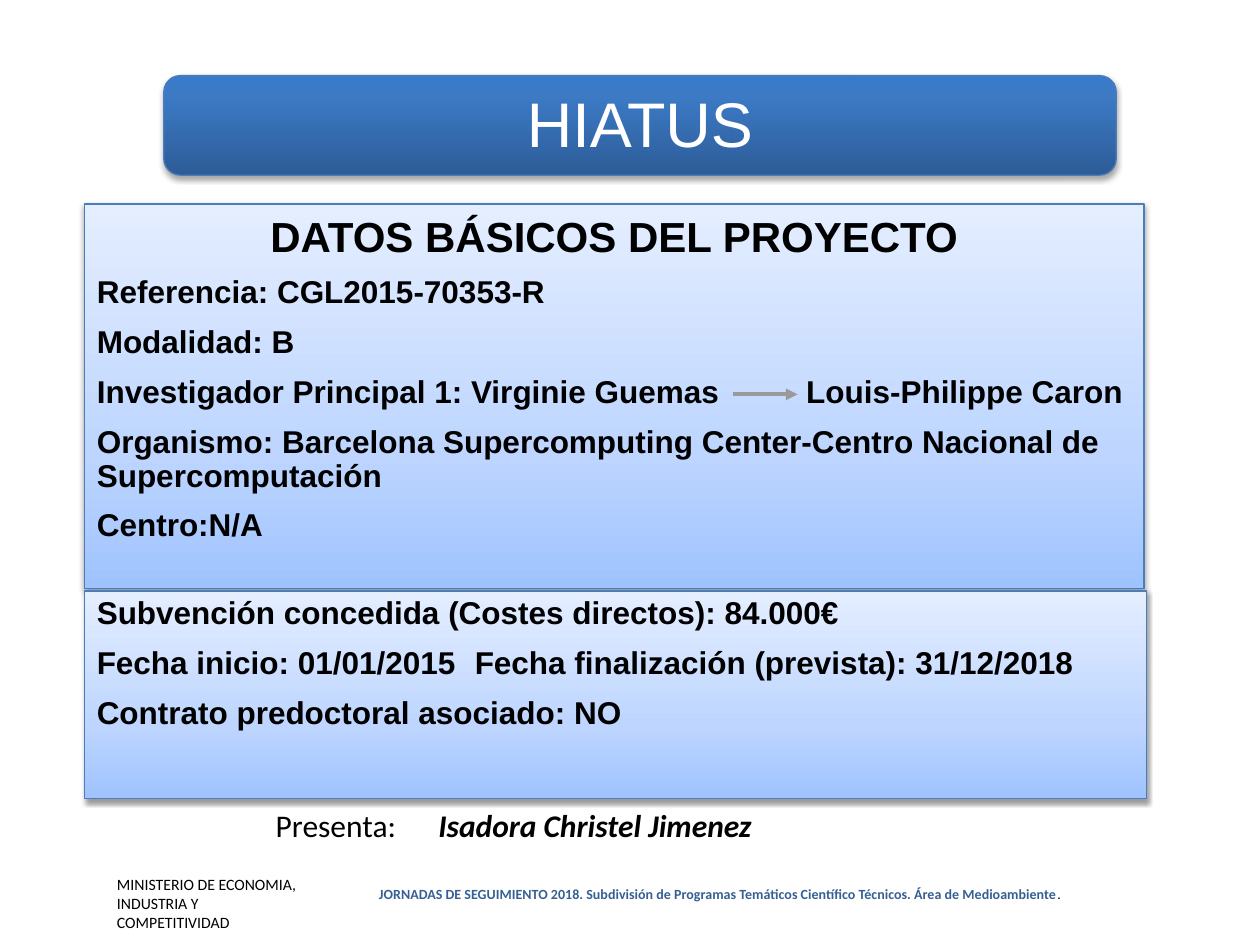
import pptx
import pptx.util
import pptx.dml.color
import pptx.enum.shapes
import pptx.enum.text
import pptx.oxml
import pptx.oxml.ns
from pptx.util import Inches

COLORS = {
    "text": "000000",
    "white": "FFFFFF",
    "footer": "366092",
    "outline": "4A7DBA",
    "arrow": "999999",
}
PANEL_STOPS = [(0, "9FC3FF"), (35, "BDD5FF"), (100, "E4EEFF")]
TITLE_STOPS = [(0, "2D5C97"), (80, "3C7AC5"), (100, "397BC9")]
ALIGN = pptx.enum.text.PP_ALIGN
SHAPES = pptx.enum.shapes.MSO_SHAPE
NAMESPACE = pptx.oxml.ns.nsdecls("a")


def rgb(name):
    return pptx.dml.color.RGBColor.from_string(COLORS[name])


class SlideBuilder:
    def __init__(self, page):
        self.page = page

    def style(self, span, size, font="Arial", color="text", bold=False, italic=False):
        span.font.size = pptx.util.Pt(size)
        span.font.name = font
        span.font.color.rgb = rgb(color)
        span.font.bold = bold
        span.font.italic = italic

    def tab(self, para, position):
        properties = para._p.get_or_add_pPr()
        properties.append(pptx.oxml.parse_xml(
            f'<a:tabLst {NAMESPACE}><a:tab pos="{Inches(position)}" algn="l"/></a:tabLst>'))

    def shape(self, kind, left, top, width, height):
        box = self.page.shapes.add_shape(
            kind, Inches(left), Inches(top), Inches(width), Inches(height))
        box.shadow.inherit = False
        box.text_frame.word_wrap = True
        box.text_frame.vertical_anchor = pptx.enum.text.MSO_ANCHOR.TOP
        return box

    def gradient_shape(self, kind, place, stops, opacity, distance):
        box = self.shape(kind, *place)
        box.line.color.rgb = rgb("outline")
        box.line.width = pptx.util.Pt(0.75)
        marks = "".join(
            f'<a:gs pos="{position * 1000}"><a:srgbClr val="{color}"/></a:gs>'
            for position, color in stops)
        properties = box._element.spPr
        properties.find(pptx.oxml.ns.qn("a:ln")).addprevious(pptx.oxml.parse_xml(
            f'<a:gradFill {NAMESPACE} rotWithShape="1"><a:gsLst>{marks}</a:gsLst>'
            '<a:lin ang="16200000" scaled="0"/></a:gradFill>'))
        properties.find(pptx.oxml.ns.qn("a:effectLst")).append(pptx.oxml.parse_xml(
            f'<a:outerShdw {NAMESPACE} blurRad="{pptx.util.Pt(3.1)}" '
            f'dist="{pptx.util.Pt(distance)}" dir="5400000" rotWithShape="0">'
            f'<a:srgbClr val="000000"><a:alpha val="{opacity * 1000}"/></a:srgbClr>'
            '</a:outerShdw>'))
        return box

    def title(self, text, place):
        box = self.gradient_shape(SHAPES.ROUNDED_RECTANGLE, place, TITLE_STOPS, 35, 1.8)
        frame = box.text_frame
        frame.margin_top = Inches(0.15)
        frame.vertical_anchor = pptx.enum.text.MSO_ANCHOR.MIDDLE
        frame.text = text
        para = frame.paragraphs[0]
        para.alignment = ALIGN.CENTER
        para.line_spacing = 0.7
        self.style(para.runs[0], 36, color="white")

    def panel(self, place, lines, heading=None, tab=None):
        box = self.gradient_shape(SHAPES.RECTANGLE, place, PANEL_STOPS, 38, 1.6)
        frame = box.text_frame
        frame.text = "\n".join(([heading] if heading else []) + lines)
        for index, para in enumerate(frame.paragraphs):
            is_heading = bool(heading) and index == 0
            para.alignment = ALIGN.CENTER if is_heading else ALIGN.LEFT
            if not is_heading:
                para.line_spacing = 0.9
            if index:
                para.space_before = pptx.util.Pt(9)
            if "\t" in para.text:
                self.tab(para, tab)
            for span in para.runs:
                self.style(span, 24 if is_heading else 18, bold=True)

    def footer_block(self, text, place):
        box = self.shape(SHAPES.RECTANGLE, *place)
        box.fill.solid()
        box.fill.fore_color.rgb = rgb("white")
        box.line.fill.background()
        box.text_frame.text = text
        para = box.text_frame.paragraphs[0]
        para.alignment = ALIGN.LEFT
        self.style(para.runs[0], 9, "Calibri")

    def label(self, place, spans, size, tab=None):
        box = self.page.shapes.add_textbox(*map(Inches, place))
        box.text_frame.word_wrap = True
        para = box.text_frame.paragraphs[0]
        if tab:
            self.tab(para, tab)
        for text, look in spans:
            span = para.add_run()
            span.text = text
            self.style(span, size, "Calibri", **look)

    def arrow(self, start, end):
        line = self.page.shapes.add_connector(
            pptx.enum.shapes.MSO_CONNECTOR.STRAIGHT, *map(Inches, start + end))
        line.line.color.rgb = rgb("arrow")
        line.line.width = pptx.util.Pt(2.25)
        line.line._get_or_add_ln().append(
            pptx.oxml.parse_xml(f'<a:tailEnd {NAMESPACE} type="triangle"/>'))
        line._element.spPr.append(pptx.oxml.parse_xml(f"<a:effectLst {NAMESPACE}/>"))


def main():
    deck = pptx.Presentation()
    deck.slide_width = Inches(10)
    deck.slide_height = Inches(7.5)
    builder = SlideBuilder(deck.slides.add_slide(deck.slide_layouts[6]))

    builder.footer_block(
        "MINISTERIO DE ECONOMIA, INDUSTRIA Y COMPETITIVIDAD", (0.83, 6.89, 1.72, 0.59))
    builder.label((2.91, 6.98, 6.27, 0.24), [
        ("JORNADAS DE SEGUIMIENTO 2018. Subdivisión de Programas Temáticos "
         "Científico Técnicos. Área de Medioambiente", {"color": "footer", "bold": True}),
        (".", {}),
    ], 8)
    builder.panel((0.67, 1.62, 8.41, 3.05), [
        "Referencia: CGL2015-70353-R",
        "Modalidad: B",
        "Investigador Principal 1: Virginie Guemas\tLouis-Philippe Caron",
        "Organismo: Barcelona Supercomputing Center-Centro Nacional de Supercomputación",
        "Centro:N/A",
    ], heading="DATOS BÁSICOS DEL PROYECTO", tab=5.63)
    builder.title("HIATUS", (1.3, 0.6, 7.56, 0.79))
    builder.label((2.09, 6.35, 7.2, 0.4), [
        ("Presenta:\t", {}),
        ("Isadora Christel Jimenez", {"bold": True, "italic": True}),
    ], 18, tab=1.29)
    builder.panel((0.67, 4.69, 8.43, 1.65), [
        "Subvención concedida (Costes directos): 84.000€",
        "Fecha inicio: 01/01/2015\tFecha finalización (prevista): 31/12/2018",
        "Contrato predoctoral asociado: NO",
    ], tab=3)
    builder.arrow((5.82, 3.13), (6.33, 3.13))

    deck.save("out.pptx")


if __name__ == "__main__":
    main()
